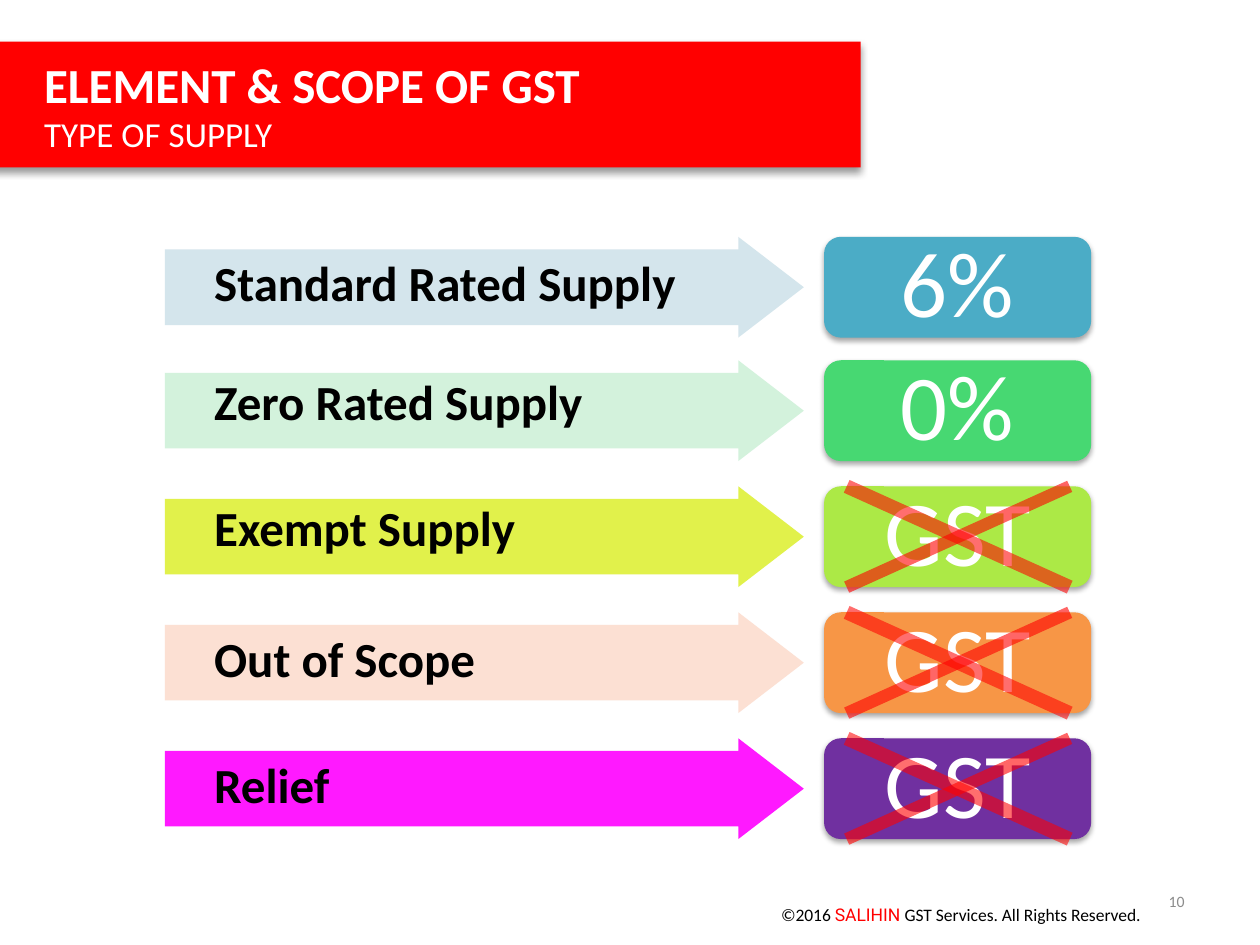
"""Build the slide on the types of supply under GST."""
import pptx
import pptx.dml.color
import pptx.enum.shapes
import pptx.enum.text
import pptx.oxml
import pptx.oxml.ns
import pptx.util

Inches, Pt = pptx.util.Inches, pptx.util.Pt
Color = pptx.dml.color.RGBColor.from_string
Shape = pptx.enum.shapes.MSO_SHAPE
Anchor = pptx.enum.text.MSO_ANCHOR
Align = pptx.enum.text.PP_ALIGN
THEME = {
    "font": "Calibri", "accent_font": "Roboto",
    "red": "FF0000", "white": "FFFFFF", "black": "000000", "grey": "8C8C8C",
    "title": 28, "subtitle": 20, "label": 28, "badge": 53, "footer": 10, "number": 9,
}
SUPPLIES = [
    ("Standard Rated Supply", "D0E3EA", "6%", "4BACC6", 1.88, 0.08),
    ("Zero Rated Supply", "CFF1D9", "0%", "47D872", 2.86, 0.04),
    ("Exempt Supply", "DEF038", "GST", "ACE946", 3.86, 0.04),
    ("Out of Scope", "FCDDCF", "GST", "F79646", 4.86, 0.08),
    ("Relief", "FF00FF", "GST", "7030A0", 5.86, 0.08),
]
HEIGHT = 0.8
CROSSED = "GST"


def add_block(kind, left, top, width, height, color, shadow=None):
    block = page.shapes.add_shape(
        kind, Inches(left), Inches(top), Inches(width), Inches(height))
    block.fill.solid()
    block.fill.fore_color.rgb = Color(color)
    block.line.fill.background()
    block.shadow.inherit = False
    if shadow:
        opacity, blur, distance = shadow
        effects = block.element.spPr.find(pptx.oxml.ns.qn("a:effectLst"))
        effects.append(pptx.oxml.parse_xml(
            f'<a:outerShdw {pptx.oxml.ns.nsdecls("a")} blurRad="{Pt(blur)}" '
            f'dist="{Pt(distance)}" dir="5400000" rotWithShape="0">'
            f'<a:srgbClr val="000000"><a:alpha val="{opacity * 1000}"/></a:srgbClr>'
            '</a:outerShdw>'))
    block.text_frame.word_wrap = True
    return block


def style(target, text, size, color, font=THEME["font"], bold=False):
    target.text = text
    target.font.size = Pt(size)
    target.font.color.rgb = Color(color)
    target.font.name = font
    target.font.bold = bold


deck = pptx.Presentation()
deck.slide_width, deck.slide_height = Inches(10), Inches(7.5)
page = deck.slides.add_slide(deck.slide_layouts[6])

footer = page.shapes.add_textbox(Inches(6.1), Inches(7.06), Inches(3.21), Inches(0.4))
footer.text_frame.word_wrap = True
footer.text_frame.vertical_anchor = Anchor.MIDDLE
for text, color, font in [
    ("©2016 ", THEME["black"], THEME["font"]),
    ("SALIHIN ", THEME["red"], THEME["accent_font"]),
    ("GST Services. All Rights Reserved.", THEME["black"], THEME["font"]),
]:
    span = footer.text_frame.paragraphs[0].add_run()
    style(span, text, THEME["footer"], color, font)

banner = add_block(Shape.RECTANGLE, -0.25, 0.33, 7.08, 1, THEME["red"], (40, 4, 3))
banner.text_frame.margin_left = Inches(0.6)
banner.text_frame.vertical_anchor = Anchor.MIDDLE
title = banner.text_frame.paragraphs[0]
subtitle = banner.text_frame.add_paragraph()
style(title, "ELEMENT & SCOPE OF GST", THEME["title"], THEME["white"], bold=True)
style(subtitle, "TYPE OF SUPPLY", THEME["subtitle"], THEME["white"])
for para in (title, subtitle):
    para.alignment = Align.LEFT

for label, arrow_color, rate, badge_color, top, inset in SUPPLIES:
    arrow = add_block(Shape.RIGHT_ARROW, 1.31, top, 5.07, HEIGHT, arrow_color)
    arrow.adjustments[0], arrow.adjustments[1] = 0.75, 0.65
    tint = arrow.element.spPr.xpath("./a:solidFill/a:srgbClr")[0]
    pptx.oxml.ns.qn("a:alpha")
    tint.append(pptx.oxml.parse_xml(
        f'<a:alpha {pptx.oxml.ns.nsdecls("a")} val="90000"/>'))
    frame = arrow.text_frame
    frame.vertical_anchor = Anchor.TOP
    frame.margin_left, frame.margin_top = Inches(0.39), Inches(inset)
    frame.margin_right = frame.margin_bottom = 0
    para = frame.paragraphs[0]
    style(para, label, THEME["label"], THEME["black"], bold=True)
    para.alignment, para.line_spacing = Align.LEFT, 0.9

    badge = add_block(
        Shape.ROUNDED_RECTANGLE, 6.54, top, 2.12, HEIGHT, badge_color, (35, 3.1, 1.8))
    frame = badge.text_frame
    frame.vertical_anchor = Anchor.MIDDLE
    frame.margin_left = frame.margin_right = Inches(0.28)
    frame.margin_top = frame.margin_bottom = Inches(0.17)
    para = frame.paragraphs[0]
    style(para, rate, THEME["badge"], THEME["white"])
    para.alignment, para.line_spacing = Align.CENTER, 0.9

    if rate == CROSSED:
        for start, end, weight, opacity in [(6.72, 8.49, 8, 56), (8.49, 6.72, 7, 60)]:
            stroke = page.shapes.add_connector(
                pptx.enum.shapes.MSO_CONNECTOR.STRAIGHT,
                Inches(start), Inches(top), Inches(end), Inches(top + HEIGHT))
            stroke.line.width = Pt(weight)
            stroke.line.color.rgb = Color(THEME["red"])
            properties = stroke.element.spPr
            properties.xpath("./a:ln//a:srgbClr")[0].append(pptx.oxml.parse_xml(
                f'<a:alpha {pptx.oxml.ns.nsdecls("a")} val="{opacity * 1000}"/>'))
            properties.append(pptx.oxml.parse_xml(
                f'<a:effectLst {pptx.oxml.ns.nsdecls("a")}/>'))

number = page.shapes.add_textbox(Inches(7.17), Inches(6.95), Inches(2.33), Inches(0.4))
number.text_frame.word_wrap = True
number.text_frame.vertical_anchor = Anchor.MIDDLE
para = number.text_frame.paragraphs[0]
style(para, "10", THEME["number"], THEME["grey"])
para.alignment = Align.RIGHT

deck.save("out.pptx")
